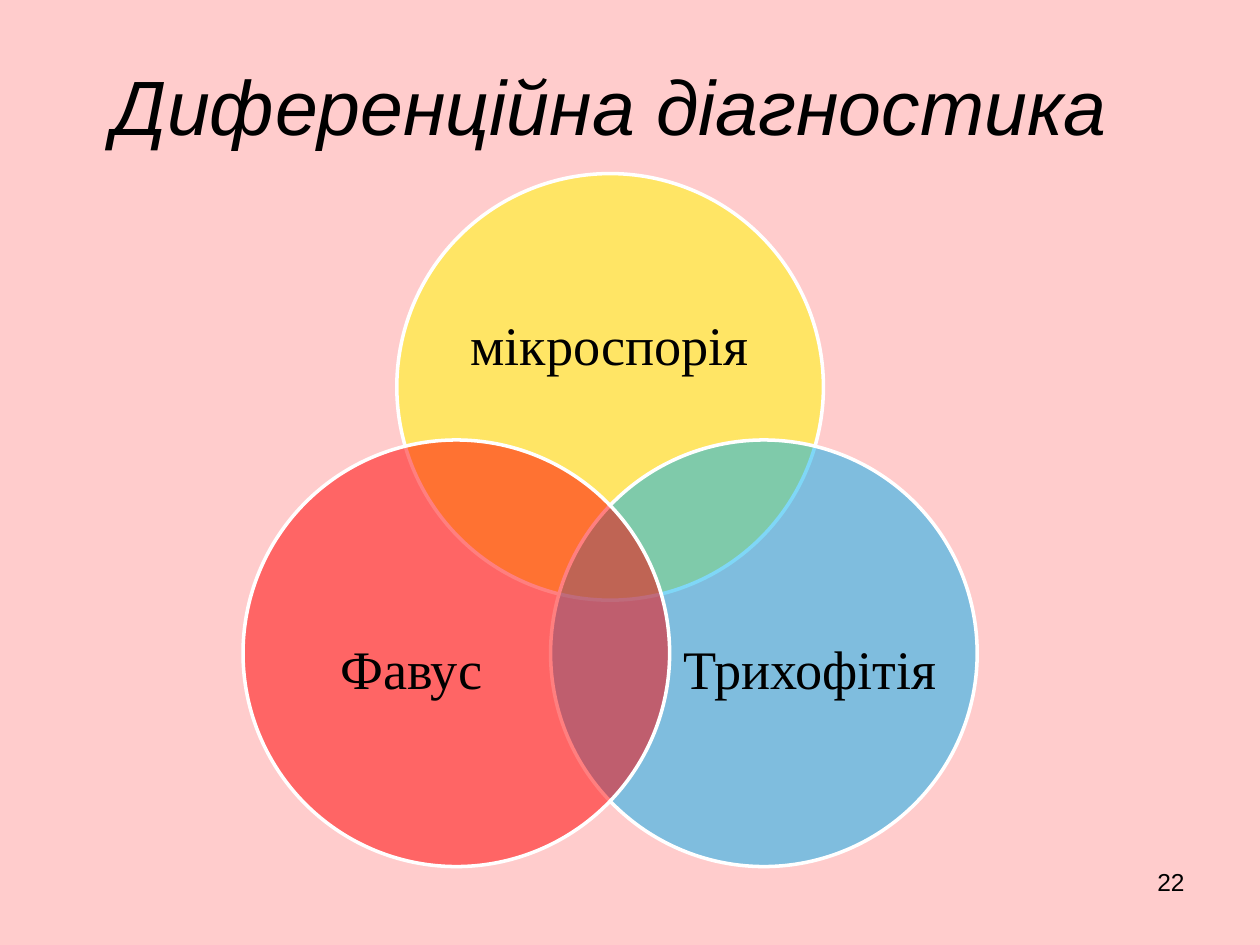
import pptx
import pptx.util
import pptx.dml.color
import pptx.enum.shapes
import pptx.enum.text
from lxml import etree

Cm, Pt = pptx.util.Cm, pptx.util.Pt
RGBColor = pptx.dml.color.RGBColor
PP_ALIGN = pptx.enum.text.PP_ALIGN
MSO_ANCHOR = pptx.enum.text.MSO_ANCHOR

PINK = RGBColor(0xFF, 0xCC, 0xCC)
YELLOW = RGBColor(0xFF, 0xFF, 0x00)
BLUE = RGBColor(0x00, 0xB0, 0xF0)
RED = RGBColor(0xFF, 0x00, 0x00)
WHITE = RGBColor(0xFF, 0xFF, 0xFF)
BLACK = RGBColor(0x00, 0x00, 0x00)


def add_text(shapes, text, box, font, size, align, anchor):
    sp = shapes.add_textbox(*[Cm(v) for v in box])
    tf = sp.text_frame
    tf.text = text
    tf.word_wrap = True
    tf.vertical_anchor = anchor
    p = tf.paragraphs[0]
    p.alignment = align
    r = p.runs[0]
    r.font.name = font
    r.font.size = Pt(size)
    r.font.color.rgb = BLACK
    return sp


prs = pptx.Presentation()
prs.slide_width = Cm(25.4)
prs.slide_height = Cm(19.05)
s = prs.slides.add_slide(prs.slide_layouts[6])
s.background.fill.solid()
s.background.fill.fore_color.rgb = PINK

# Slide number
add_text(s.shapes, "22", (18.2, 17.35, 5.93, 1.32), "Arial", 14,
         PP_ALIGN.RIGHT, MSO_ANCHOR.TOP)

# Venn diagram: one circle on top, two below it at equal offsets
DIAMETER = 8.6
CENTER_X, OFFSET_X = 12.3, 3.1
TOP_Y, BOTTOM_Y = 3.5, 8.87
circles = [
    ("мікроспорія", YELLOW, CENTER_X, TOP_Y, (9.14, 5, 6.3, 3.86)),
    ("Трихофітія", BLUE, CENTER_X + OFFSET_X, BOTTOM_Y, (13.74, 11.1, 5.16, 4.72)),
    ("Фавус", RED, CENTER_X - OFFSET_X, BOTTOM_Y, (5.71, 11.1, 5.16, 4.72)),
]
venn = s.shapes.add_group_shape()
for label, color, center_x, top, label_box in circles:
    sp = venn.shapes.add_shape(
        pptx.enum.shapes.MSO_SHAPE.OVAL, Cm(center_x - DIAMETER / 2), Cm(top),
        Cm(DIAMETER), Cm(DIAMETER))
    sp.shadow.inherit = False
    sp.fill.solid()
    sp.fill.fore_color.rgb = color
    sp.line.color.rgb = WHITE
    sp.line.width = Pt(2)
    # Half-transparent fill
    clr = sp.fill._xPr.find(pptx.oxml.ns.qn("a:solidFill"))[0]
    etree.SubElement(clr, pptx.oxml.ns.qn("a:alpha"), val="50000")

    sp = add_text(venn.shapes, label, label_box, "Times New Roman", 31,
                  PP_ALIGN.CENTER, MSO_ANCHOR.MIDDLE)
    tf = sp.text_frame
    tf.word_wrap = False
    tf.margin_left = tf.margin_right = tf.margin_top = tf.margin_bottom = 0

# Title
sp = add_text(s.shapes, "Диференційна діагностика ", (1.09, 0.53, 22.86, 3.18),
              "Arial", 44, PP_ALIGN.CENTER, MSO_ANCHOR.MIDDLE)
sp.text_frame.paragraphs[0].runs[0].font.italic = True

prs.save("out.pptx")
